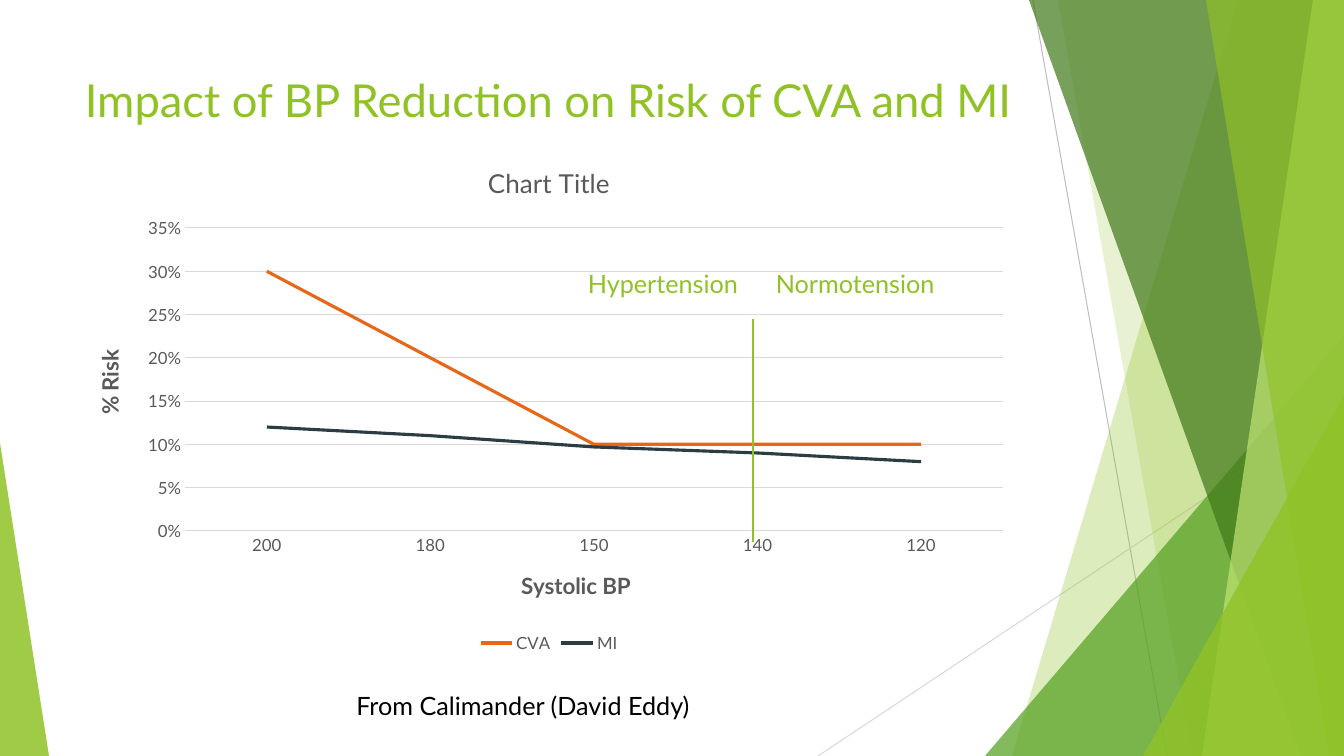
from lxml import etree
from pptx import Presentation
from pptx import util as u
from pptx.chart.data import CategoryChartData
from pptx.dml.color import RGBColor
from pptx.enum import chart as charts, shapes, text
from pptx.oxml import ns

# Content (lengths in px)
PX = 914400 / 100.8
WIDTH, HEIGHT = 1344, 756
FONT, GREEN, GREY, PALE = "Lato", "90C226", "595959", "D9D9D9"

RAYS = [  # start, end, colour
    ((1033, 0), (1167, HEIGHT), "BFBFBF"),
    ((WIDTH, 406), (818, HEIGHT), PALE),
]
FACETS = [  # from back to front: band (top x, bottom x) or triangle (box, apex)
    ("band", (1238, 1012), GREEN, 30),
    ("band", (1058, 1192), GREEN, 20),
    ("triangle", ((985, 336, 359, 420), 1), "54A021", 72),
    ("band", (1029, 1301), "3F7819", 70),
    ("band", (1313, 1202), "C0E474", 70),
    ("band", (1206, 1329), GREEN, 65),
    ("triangle", ((1143, 396, 201, 360), 1), GREEN, 80),
    ("triangle", ((0, 443, 49, 313), 0), GREEN, 85),
]
LEFT, CENTER = text.PP_ALIGN.LEFT, text.PP_ALIGN.CENTER
TITLE = ("Impact of BP Reduction on Risk of CVA and MI",
         (75, 67, 948, 78), 32.4, GREEN, LEFT)
LABELS = [
    ("From Calimander (David Eddy)", (202, 685, 642, 40), 18, "000000", CENTER),
    ("Hypertension", (578, 263, 190, 40), 18, GREEN, LEFT),
    ("Normotension", (766, 263, 202, 40), 18, GREEN, LEFT),
]
THRESHOLD = ((753, 542), (753, 319), GREEN)
CHART_BOX = (75, 144, 948, 513)
PLOT_BOX = (185, 228, 818, 303)
CHART_TITLE = "Chart Title"
BP_LEVELS = ["200", "180", "150", "140", "120"]
RISKS = [
    ("CVA", [0.3, 0.2, 0.1, 0.1, 0.1], "E76618"),
    ("MI", [0.12, 0.11, 0.097, 0.09, 0.08], "2C3C43"),
]
BP_TITLE = ("Systolic BP", (517, 566))
RISK_TITLE = ("% Risk", (90, 346))

deck = Presentation()
deck.slide_width, deck.slide_height = u.Emu(round(WIDTH * PX)), u.Emu(round(HEIGHT * PX))
slide = deck.slides.add_slide(deck.slide_layouts[6])


def emu(lengths):
    return [u.Emu(round(n * PX)) for n in lengths]


def rgb(colour):
    return RGBColor.from_string(colour)


def style_font(font, size, colour, bold=False):
    font.name, font.size, font.bold = FONT, u.Pt(size), bold
    font.color.rgb = rgb(colour)


def style_line(line, colour, points):
    line.color.rgb, line.width = rgb(colour), u.Pt(points)


def add_line(start, end, colour, points):
    line = slide.shapes.add_connector(
        shapes.MSO_CONNECTOR.STRAIGHT, *emu(start), *emu(end))
    style_line(line.line, colour, points)
    etree.SubElement(line._element.spPr, ns.qn("a:effectLst"))


def add_facet(kind, geometry, colour, opacity):
    if kind == "band":
        top, bottom = geometry
        outline = slide.shapes.build_freeform(top, 0, scale=PX)
        outline.add_line_segments([(WIDTH, 0), (WIDTH, HEIGHT), (bottom, HEIGHT)])
        facet = outline.convert_to_shape()
    else:
        box, apex = geometry
        facet = slide.shapes.add_shape(
            shapes.MSO_SHAPE.ISOSCELES_TRIANGLE, *emu(box))
        facet.adjustments[0] = apex
    facet.shadow.inherit = False
    facet.line.fill.background()
    facet.fill.solid()
    facet.fill.fore_color.rgb = rgb(colour)
    fill = facet._element.spPr.find(".//" + ns.qn("a:srgbClr"))
    etree.SubElement(fill, ns.qn("a:alpha"), val=str(opacity * 1000))


def add_label(words, box, size, colour, align):
    frame = slide.shapes.add_textbox(*emu(box)).text_frame
    frame.word_wrap = True
    frame.margin_right = 0 if align == LEFT else frame.margin_left
    line = frame.paragraphs[0]
    line.text, line.alignment = words, align
    style_font(line.font, size, colour)


def place(part, position, index, inner=False):
    """Fix a chart part at a position, as fractions of the chart box."""
    for old in part.findall(ns.qn("c:layout")):
        part.remove(old)
    layout = etree.Element(ns.qn("c:layout"))
    part.insert(index, layout)
    manual = etree.SubElement(layout, ns.qn("c:manualLayout"))
    x, y, w, h = CHART_BOX
    settings = [("layoutTarget", "inner")] if inner else []
    settings += [("xMode", "edge"), ("yMode", "edge")]
    settings += [("x", (position[0] - x) / w), ("y", (position[1] - y) / h)]
    if inner:
        settings += [("w", position[2] / w), ("h", position[3] / h)]
    for tag, value in settings:
        etree.SubElement(manual, ns.qn("c:" + tag), val=str(value))


def title_axis(axis, words, position):
    title = axis.axis_title
    line = title.text_frame.paragraphs[0]
    line.text = words
    style_font(line.font, 16, GREY, bold=True)
    place(title._element, position, 1)


# Background facets and title
for ray in RAYS:
    add_line(*ray, 0.75)
for facet_spec in FACETS:
    add_facet(*facet_spec)
add_label(*TITLE)

# Risk chart
risk_data = CategoryChartData(number_format="0%")
risk_data.categories = BP_LEVELS
for name, values, _ in RISKS:
    risk_data.add_series(name, values)
risk_chart = slide.shapes.add_chart(
    charts.XL_CHART_TYPE.LINE, *emu(CHART_BOX), risk_data).chart
style_font(risk_chart.font, 10, "000000")

risk_chart.has_title = True
heading = risk_chart.chart_title.text_frame.paragraphs[0]
heading.text = CHART_TITLE
style_font(heading.font, 18.6, GREY)
risk_chart.chart_title.include_in_layout = False

risk_chart.has_legend = True
risk_chart.legend.position = charts.XL_LEGEND_POSITION.BOTTOM
risk_chart.legend.include_in_layout = False
style_font(risk_chart.legend.font, 12, GREY)

bp_axis, risk_axis = risk_chart.category_axis, risk_chart.value_axis
for axis, axis_title in ((bp_axis, BP_TITLE), (risk_axis, RISK_TITLE)):
    axis.major_tick_mark = axis.minor_tick_mark = charts.XL_TICK_MARK.NONE
    style_font(axis.tick_labels.font, 12, GREY)
    title_axis(axis, *axis_title)
style_line(bp_axis.format.line, PALE, 0.75)
risk_axis.format.line.fill.background()
style_line(risk_axis.major_gridlines.format.line, PALE, 0.75)
risk_axis.minimum_scale, risk_axis.maximum_scale, risk_axis.major_unit = 0, 0.35, 0.05
risk_axis.tick_labels.number_format = "0%"
risk_axis.tick_labels.number_format_is_linked = False

risk_plot = risk_chart.plots[0]
risk_plot.vary_by_categories = False
for series, (_, _, colour) in zip(risk_plot.series, RISKS):
    series.smooth = False
    style_line(series.format.line, colour, 2.25)
place(risk_chart._chartSpace.chart.plotArea, PLOT_BOX, 0, inner=True)

# Threshold and labels
for label in LABELS:
    add_label(*label)
add_line(*THRESHOLD, 1)

deck.save("out.pptx")
